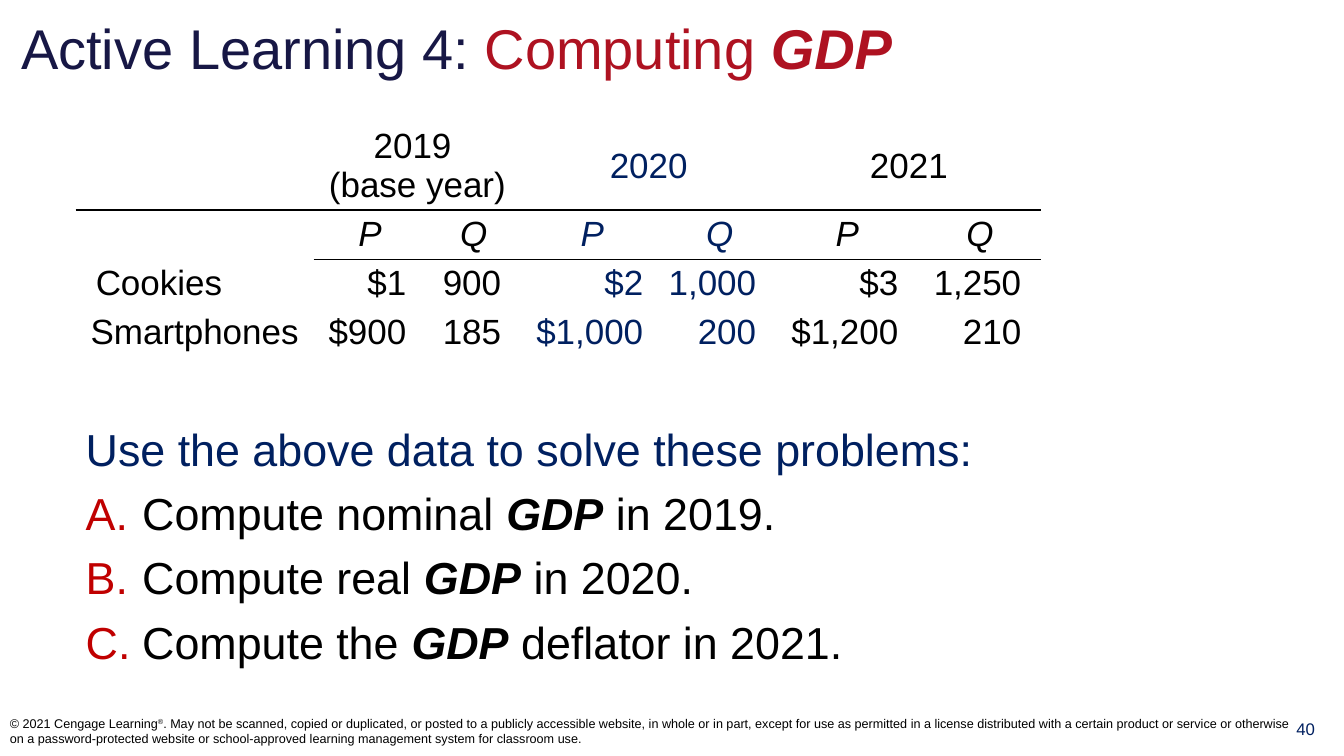
from lxml import etree
from pptx import Presentation
from pptx.dml.color import RGBColor
from pptx.enum.text import MSO_ANCHOR, MSO_AUTO_SIZE, PP_ALIGN
from pptx.oxml.ns import qn
from pptx.util import Pt

EMU_PER_PX = 9144  # 100 px to the inch
LEFT, CENTER, RIGHT = PP_ALIGN.LEFT, PP_ALIGN.CENTER, PP_ALIGN.RIGHT
TOP, MIDDLE = MSO_ANCHOR.TOP, MSO_ANCHOR.MIDDLE
NO_AUTOFIT = MSO_AUTO_SIZE.NONE
TITLE_AND_CONTENT = 1
PLAIN_TABLE_STYLE = "{2D5ABB26-0587-4C30-8999-92F81FD0307C}"
COLORS = {
    "indigo": "171745",
    "crimson": "AE1221",
    "navy": "002060",
    "red": "C00000",
    "black": "000000",
}

COLUMN_WIDTHS = [236, 112, 94, 141, 112, 141, 122]
ROW_HEIGHTS = [86, 48, 48, 48]
YEARS = [["2019 ", "(base year)"], ["2020"], ["2021"]]
YEAR_COLORS = ["black", "navy", "black"]
GOODS = [
    ["Cookies", "$1", "900", "$2", "1,000", "$3", "1,250"],
    ["Smartphones", "$900", "185", "$1,000", "200", "$1,200", "210"],
]
PROBLEMS = [
    ("Compute nominal ", " in 2019."),
    ("Compute real ", " in 2020."),
    ("Compute the ", " deflator in 2021."),
]
COPYRIGHT = (
    ". May not be scanned, copied or duplicated, or posted to a publicly accessible "
    "website, in whole or in part, except for use as permitted in a license distributed "
    "with a certain product or service or otherwise on a password-protected website or "
    "school-approved learning management system for classroom use."
)


def px(length):
    return length * EMU_PER_PX


def add_element(parent, tag, **attributes):
    return etree.SubElement(parent, qn(tag), attributes)


class SlideBuilder:
    font = "Arial"

    def __init__(self, presentation):
        layout = presentation.slide_layouts[TITLE_AND_CONTENT]
        self.slide = presentation.slides.add_slide(layout)

    def run(self, paragraph, text, size, color, bold=False, italic=False):
        run = paragraph.add_run()
        run.text = text
        run.font.name = self.font
        run.font.size = Pt(size)
        run.font.bold = bold
        run.font.italic = italic
        run.font.color.rgb = RGBColor.from_string(COLORS[color])
        return run

    def place(self, shape, left, top, width, height, anchor, wrap=True):
        """Move a text shape and return its formatted text frame."""
        shape.left, shape.top = px(left), px(top)
        shape.width, shape.height = px(width), px(height)
        frame = shape.text_frame
        frame.auto_size = NO_AUTOFIT
        frame.word_wrap = wrap
        frame.vertical_anchor = anchor
        return frame

    def title(self, box, runs):
        frame = self.place(self.slide.shapes.title, *box, MIDDLE, wrap=False)
        paragraph = frame.paragraphs[0]
        paragraph.alignment = LEFT
        for text, color, strong in runs:
            self.run(paragraph, text, 40, color, strong, strong)

    def text_box(self, box, anchor, alignment):
        """Add an empty text box and return its first paragraph."""
        shape = self.slide.shapes.add_textbox(0, 0, 0, 0)
        paragraph = self.place(shape, *box, anchor).paragraphs[0]
        paragraph.alignment = alignment
        return paragraph

    def problem_list(self, box, heading, problems):
        frame = self.place(self.slide.placeholders[1], *box, TOP)
        frame.margin_top = px(10)
        paragraph = frame.paragraphs[0]
        properties = paragraph._p.get_or_add_pPr()
        properties.set("marL", "0")
        properties.set("indent", "0")
        add_element(properties, "a:buNone")
        paragraph.space_before = Pt(0)
        self.run(paragraph, heading, 32, "navy")
        for before, after in problems:
            paragraph = frame.add_paragraph()
            self.letter(paragraph)
            paragraph.space_before = Pt(7.5)
            self.run(paragraph, before, 32, "black")
            self.run(paragraph, "GDP", 32, "black", bold=True, italic=True)
            self.run(paragraph, after, 32, "black")

    def letter(self, paragraph):
        """Number a paragraph A., B., C. with a hanging indent."""
        properties = paragraph._p.get_or_add_pPr()
        properties.set("marL", str(px(56)))
        properties.set("indent", str(px(-56)))
        color = add_element(properties, "a:buClr")
        add_element(color, "a:srgbClr", val=COLORS["red"])
        add_element(properties, "a:buFont", typeface=self.font)
        add_element(properties, "a:buAutoNum", type="alphaUcPeriod")

    def table(self, left, top, widths, heights):
        """Add a plain table without lines or fills."""
        shape = self.slide.shapes.add_table(
            len(heights), len(widths), px(left), px(top), px(sum(widths)), px(sum(heights)))
        table = shape.table
        table.first_row = table.horz_banding = False
        shape._element.find(".//" + qn("a:tableStyleId")).text = PLAIN_TABLE_STYLE
        for column, width in zip(table.columns, widths):
            column.width = px(width)
        for row, height in zip(table.rows, heights):
            row.height = px(height)
        for cell in table.iter_cells():
            cell.fill.background()
            cell.vertical_anchor = MIDDLE
        return table

    def cell(self, cell, lines, color, alignment=CENTER, italic=False):
        frame = cell.text_frame
        for index, line in enumerate(lines):
            paragraph = frame.add_paragraph() if index else frame.paragraphs[0]
            paragraph.alignment = alignment
            self.run(paragraph, line, 25, color, italic=italic)

    def underline(self, cell):
        line = etree.Element(qn("a:lnB"), w=str(Pt(1)))
        fill = add_element(line, "a:solidFill")
        add_element(fill, "a:srgbClr", val=COLORS["black"])
        cell._tc.get_or_add_tcPr().insert(0, line)


def build_data_table(builder):
    table = builder.table(75, 121, COLUMN_WIDTHS, ROW_HEIGHTS)
    for column in range(len(COLUMN_WIDTHS)):
        builder.underline(table.cell(0, column))
        if column:
            builder.underline(table.cell(1, column))
    for index, (lines, color) in enumerate(zip(YEARS, YEAR_COLORS)):
        first = 1 + 2 * index
        table.cell(0, first).merge(table.cell(0, first + 1))
        builder.cell(table.cell(0, first), lines, color)
        for offset, symbol in enumerate("PQ"):
            builder.cell(table.cell(1, first + offset), [symbol], color, italic=True)
    for row, (good, *values) in enumerate(GOODS, start=2):
        builder.cell(table.cell(row, 0), [good], "black", LEFT if row == 2 else CENTER)
        for column, value in enumerate(values, start=1):
            cell = table.cell(row, column)
            cell.margin_left, cell.margin_right = px(5), px(20)
            builder.cell(cell, [value], YEAR_COLORS[(column - 1) // 2], RIGHT)
    table.cell(2, 0).margin_left = px(20)


def main():
    presentation = Presentation()
    presentation.slide_width, presentation.slide_height = px(1333), px(750)
    builder = SlideBuilder(presentation)
    builder.title((11, 11, 1300, 72), [
        ("Active Learning 4: ", "indigo", False),
        ("Computing ", "crimson", False),
        ("GDP", "crimson", True),
    ])
    page_number = builder.text_box((1257, 708, 76, 41), TOP, CENTER)
    builder.run(page_number, "40", 12, "navy")
    builder.problem_list(
        (75, 408, 1082, 292), "Use the above data to solve these problems:", PROBLEMS)
    build_data_table(builder)
    footer = builder.text_box((0, 700, 1292, 50), MIDDLE, LEFT)
    builder.run(footer, "© 2021 Cengage Learning", 9, "black")
    mark = builder.run(footer, "®", 9, "black")
    mark.font._element.set("baseline", "30000")
    builder.run(footer, COPYRIGHT, 9, "black")
    presentation.save("out.pptx")


if __name__ == "__main__":
    main()
